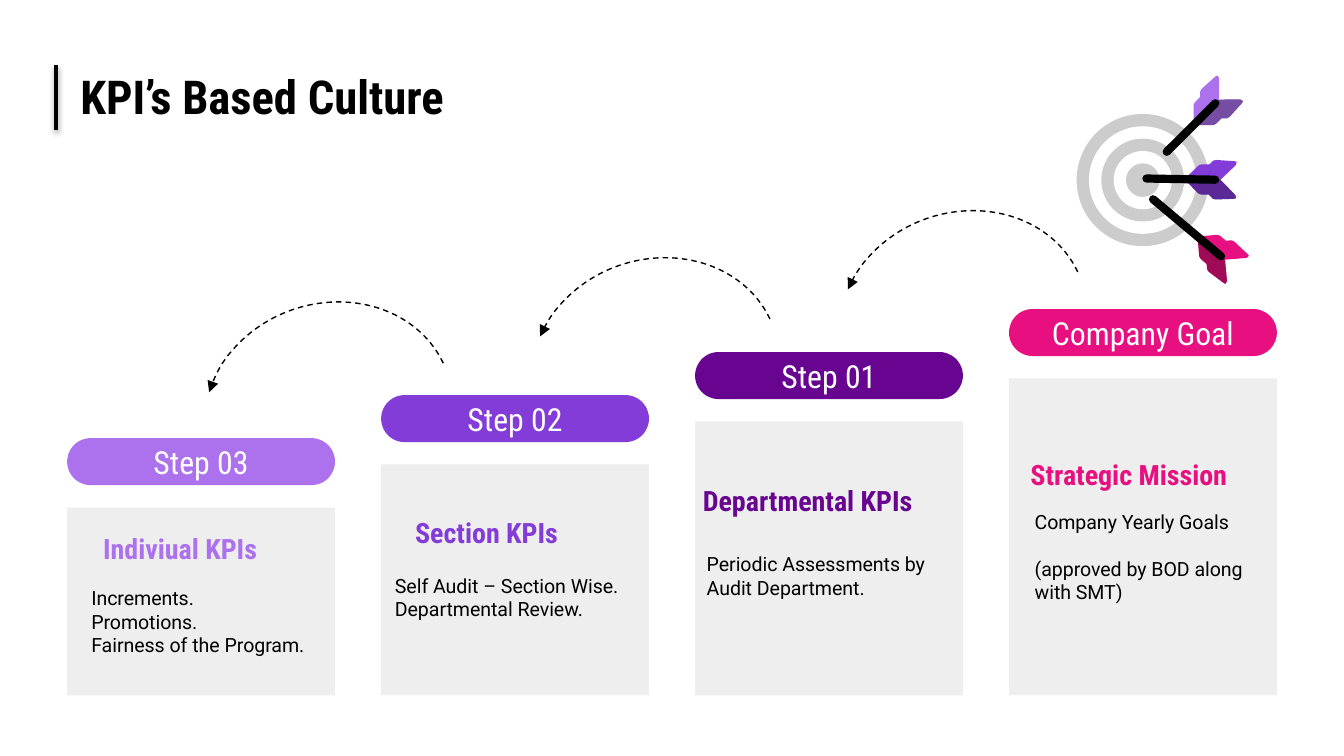
from math import cos, radians, sin

from lxml.etree import SubElement as Sub
from pptx import Presentation
from pptx.dml.color import RGBColor as Rgb
from pptx.enum.dml import MSO_LINE as Dash
from pptx.enum.shapes import MSO_CONNECTOR as Conn, MSO_SHAPE as Kind
from pptx.enum.text import MSO_ANCHOR as Anchor, PP_ALIGN as Align
from pptx.oxml.ns import qn
from pptx.util import Pt

HUES = {
    "ink": "000000", "white": "FFFFFF", "panel": "EEEEEE", "ring": "CCCCCC",
    "lilac": "AC71EC", "violet": "833CD8", "plum": "670591", "pink": "E81080",
}
HEAD, BODY = "Roboto Condensed", "Roboto"

# Columns climb to the right: pill label, hue, heading with its box, body with its box
STEPS = [
    ("Step 03", "lilac", "Indiviual KPIs", (48.2, 281.5, 131.8),
     "Increments.\nPromotions.\nFairness of the Program.", (41.8, 306, 144.7), 0),
    ("Step 02", "violet", "Section KPIs", (215.3, 272.9, 131),
     "Self Audit – Section Wise.\nDepartmental Review.", (204.5, 293, 149.8), 0),
    ("Step 01", "plum", "Departmental KPIs", (369.4, 255.6, 162),
     "Periodic Assessments by\nAudit Department.", (371.5, 281.5, 162), 0),
    ("Company Goal", "pink", "Strategic Mission", (545, 241.9, 155.5),
     "Company Yearly Goals\n(approved by BOD along with SMT)", (547.2, 271.4, 131), 12.5),
]
LEFT, PITCH, WIDE = 36, 168.2, 143.5
TOP, RISE, PILL, DROP, BASE = 234.7, 23.05, 25.2, 37.2, 372.5

ARCS = [(448.6, 113.8, 194.957), (283.7, 139, 194.957), (108.7, 162.7, 198.447)]

# Half a feather: distance along the shaft and away from it
VANE = [(0, 0), (19.3, 0), (27.5, 8.1), (27.8, 9.8), (26.5, 10.1), (16.8, 10.6),
        (15.3, 10.2), (13.2, 8.1), (9.2, 8.1), (7.6, 7.6)]
# Darts: feather tip, angle, shaft reach ahead of the feather, hue
DARTS = [(639.4, 67, -45, 20.3, "lilac"), (634.5, 96, 1, 20.3, "violet"),
         (641.5, 126.7, 40, 31, "pink")]


def tint(name):
    return Rgb.from_string(HUES[name])


class Deck:
    """Holds the slide and the style shared by its elements."""

    def __init__(self, slide):
        self.shapes = slide.shapes

    def paint(self, item, hue):
        item.shadow.inherit = False
        item.fill.solid()
        item.fill.fore_color.rgb = tint(hue)
        item.line.fill.background()
        return item

    def shape(self, kind, box, hue):
        return self.paint(self.shapes.add_shape(kind, *map(Pt, box)), hue)

    def letter(self, item, text, size, hue, face=HEAD, bold=False, align=Align.LEFT, gap=0):
        """Put styled text into a shape or text box."""
        frame = item.text_frame
        frame.word_wrap = True
        frame.vertical_anchor = Anchor.MIDDLE
        frame.margin_left = frame.margin_right = Pt(7.2)
        frame.margin_top = frame.margin_bottom = Pt(7.2)
        frame.text = text
        for row, para in enumerate(frame.paragraphs):
            para.alignment = align
            if row and gap:
                para.space_before = Pt(gap)
            for run in para.runs:
                font = run.font
                font.name, font.size, font.bold = face, Pt(size), bold
                font.color.rgb = tint(hue)

    def label(self, box, *args, **opts):
        self.letter(self.shapes.add_textbox(*map(Pt, box)), *args, **opts)

    def pill(self, box, text, hue):
        item = self.shape(Kind.ROUNDED_RECTANGLE, box, hue)
        item.adjustments[0] = 0.5
        self.letter(item, text, 17, "white", align=Align.CENTER)

    def arc(self, left, top, end):
        """Draw a dashed hop that ends in an arrowhead on its left."""
        item = self.shapes.add_shape(Kind.ARC, *map(Pt, (left, top, 134.6, 118.1)))
        item.shadow.inherit = False
        item.adjustments[0], item.adjustments[1] = 110.893, end
        item.rotation = 341
        item.fill.background()
        item.line.color.rgb = tint("ink")
        item.line.width = Pt(0.75)
        item.line.dash_style = Dash.DASH
        props = item._element.spPr
        props.find(qn("a:xfrm")).set("flipH", "1")
        Sub(props.find(qn("a:ln")), qn("a:tailEnd"), type="triangle")

    def line(self, ends, width, cap="flat"):
        """Draw a black line and return its effect list."""
        item = self.shapes.add_connector(Conn.STRAIGHT, *map(Pt, ends))
        item.line.color.rgb = tint("ink")
        item.line.width = Pt(width)
        props = item._element.spPr
        props.find(qn("a:ln")).set("cap", cap)
        return Sub(props, qn("a:effectLst"))

    def bar(self, ends):
        glow = Sub(self.line(ends, 2), qn("a:outerShdw"), blurRad=str(Pt(3.1)),
                   dist=str(Pt(1.6)), dir="5400000", algn="t", rotWithShape="0")
        Sub(Sub(glow, qn("a:srgbClr"), val=HUES["ink"]), qn("a:alpha"), val="38000")

    def blade(self, dots, hue):
        first, *rest = [(Pt(x), Pt(y)) for x, y in dots]
        pen = self.shapes.build_freeform(*first)
        pen.add_line_segments(rest)
        return self.paint(pen.convert_to_shape(), hue)

    def dart(self, left, top, angle, reach, hue):
        c, s = cos(radians(angle)), sin(radians(angle))

        def spot(u, v=0):
            return left + u * c - v * s, top + u * s + v * c

        near = [spot(u, v) for u, v in VANE]
        far = [spot(u, -v) for u, v in VANE]
        self.blade(near, hue)
        self.blade(far, hue)
        shade = self.blade(near, "ink")
        color = shade._element.spPr.find(".//" + qn("a:srgbClr"))
        Sub(color, qn("a:alpha"), val="31000")
        self.line(spot(-reach) + spot(16.5), 4.4, "rnd")

    def step(self, rank, name, hue, head, spot, body, place, gap):
        left, top = LEFT + rank * PITCH, TOP - rank * RISE
        self.pill((left, top, WIDE, PILL), name, hue)
        floor = top + DROP
        self.shape(Kind.RECTANGLE, (left, floor, WIDE, BASE - floor), "panel")
        self.label((*spot, 24.5), head, 15, hue, bold=True)
        self.label((*place, 54), body, 10.5, "ink", face=BODY, gap=gap)


def main():
    show = Presentation()
    show.slide_width, show.slide_height = Pt(720), Pt(405)
    deck = Deck(show.slides.add_slide(show.slide_layouts[6]))

    deck.bar((30.2, 34.8, 30.2, 69.8))
    deck.label((36, 32.4, 324, 38.2), "KPI’s Based Culture", 25, "ink", bold=True)
    for rank, step in enumerate(STEPS):
        deck.step(rank, *step)
    for arc in ARCS:
        deck.arc(*arc)
    for ring in range(5):
        half = 35.4 - 6.6 * ring
        box = (612.2 - half, 96.5 - half, 2 * half, 2 * half)
        deck.shape(Kind.OVAL, box, "white" if ring % 2 else "ring")
    for dart in DARTS:
        deck.dart(*dart)
    show.save("out.pptx")


if __name__ == "__main__":
    main()
